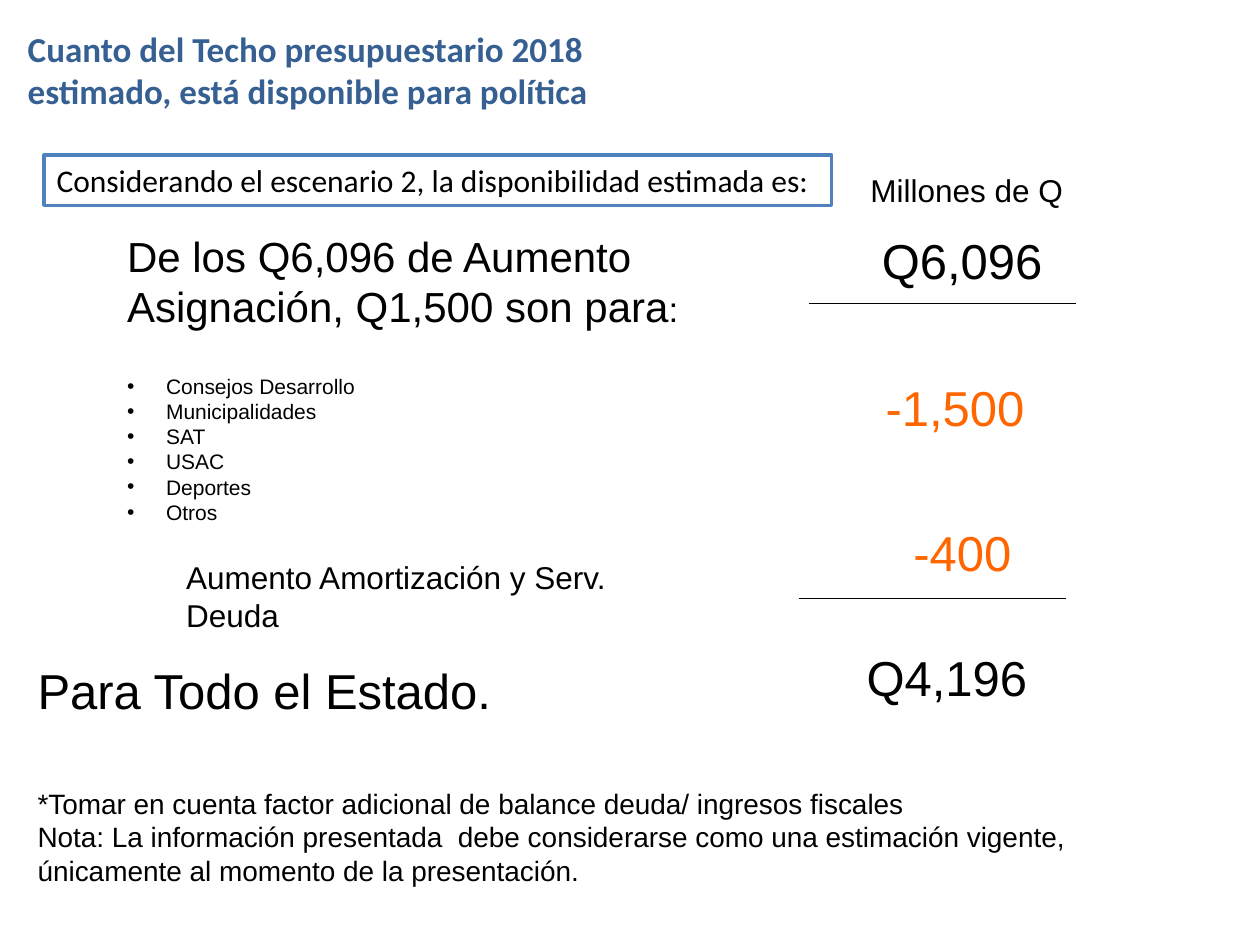
"""Build the slide on the share of the 2018 budget ceiling available for policy."""
from dataclasses import dataclass

from lxml import etree
from pptx import Presentation
from pptx.dml.color import RGBColor
from pptx.enum.shapes import MSO_CONNECTOR, MSO_SHAPE
from pptx.enum.text import MSO_ANCHOR, MSO_AUTO_SIZE, PP_ALIGN
from pptx.oxml.ns import qn
from pptx.util import Inches, Pt

STRAIGHT = MSO_CONNECTOR.STRAIGHT
RECTANGLE = MSO_SHAPE.RECTANGLE
MIDDLE, TOP = MSO_ANCHOR.MIDDLE, MSO_ANCHOR.TOP
GROW, FIXED = MSO_AUTO_SIZE.SHAPE_TO_FIT_TEXT, MSO_AUTO_SIZE.NONE
LEFT = PP_ALIGN.LEFT

COLORS = {"title": "376092", "text": "000000", "deduction": "FF6600",
          "frame": "4F81BD", "paper": "FFFFFF"}
SLIDE_WIDTH, SLIDE_HEIGHT = Inches(10), Inches(7.5)
COLUMN, ROW = SLIDE_WIDTH / 100, SLIDE_HEIGHT / 75
LINE_HEIGHT = 1.2
BULLET_INDENT = Inches(0.31)
RULE_WIDTH = 21.2


@dataclass(frozen=True)
class Area:
    """A rectangle in grid columns and rows."""
    column: float
    row: float
    columns: float
    rows: float

    def lengths(self) -> tuple[int, int, int, int]:
        """Return left, top, width and height."""
        return (int(self.column * COLUMN), int(self.row * ROW),
                int(self.columns * COLUMN), int(self.rows * ROW))


@dataclass(frozen=True)
class Label:
    """A one-line text that does not wrap."""
    text: str
    area: Area
    size: int = 28
    color: str = "text"


LABELS = [
    Label("Millones de Q", Area(68.1, 13.1, 17.4, 4), 18),
    Label("Q6,096", Area(69, 17.8, 14.9, 5.7)),
    Label("-1,500", Area(69.3, 29.5, 13.2, 5.7), color="deduction"),
    Label("-400", Area(71.5, 41, 9.9, 5.7), color="deduction"),
    Label("Q4,196", Area(67.8, 50.9, 14.9, 5.7)),
]
RULES = [(64.2, 24.1), (63.4, 47.5)]
RECIPIENTS = ["Consejos Desarrollo", "Municipalidades", "SAT", "USAC", "Deportes", "Otros"]
NOTES = [
    "*Tomar en cuenta factor adicional de balance deuda/ ingresos fiscales",
    "Nota: La información presentada  debe considerarse como una estimación vigente, "
    "únicamente al momento de la presentación.",
]


def rgb(name: str) -> RGBColor:
    """Look up a colour by its role."""
    return RGBColor.from_string(COLORS[name])


def add_run(paragraph, text: str, size: int, font: str, color: str, bold: bool) -> None:
    """Append a formatted run."""
    run = paragraph.add_run()
    run.text = text
    run.font.size, run.font.name, run.font.bold = Pt(size), font, bold
    run.font.color.rgb = rgb(color)


def write(frame, text: str, *, size: int, font: str = "Arial", color: str = "text",
          bold: bool = False, before: float = 0, bullet: bool = False,
          tail: tuple[str, int] | None = None) -> None:
    """Write one paragraph, reusing the first one while it is empty."""
    paragraph = frame.paragraphs[0]
    if paragraph.runs:
        paragraph = frame.add_paragraph()
    paragraph.alignment = LEFT
    paragraph.line_spacing = Pt(size * LINE_HEIGHT)
    paragraph.space_before = Pt(before)
    if bullet:
        properties = paragraph._p.get_or_add_pPr()
        properties.set("marL", str(BULLET_INDENT))
        properties.set("indent", str(-BULLET_INDENT))
        etree.SubElement(properties, qn("a:buFont")).set("typeface", "Arial")
        etree.SubElement(properties, qn("a:buChar")).set("char", "•")
    add_run(paragraph, text, size, font, color, bold)
    if tail:
        add_run(paragraph, tail[0], tail[1], font, color, bold)


def prepare(frame, *, wrap: bool):
    """Set wrapping, anchoring and growth of a text frame."""
    frame.word_wrap, frame.vertical_anchor, frame.auto_size = wrap, TOP, GROW
    return frame


def add_text_frame(slide, area: Area, *, wrap: bool = True):
    """Add a text box and return its frame."""
    return prepare(slide.shapes.add_textbox(*area.lengths()).text_frame, wrap=wrap)


def add_title(slide, area: Area) -> None:
    """Place and write the title."""
    title = slide.shapes.title
    title.left, title.top, title.width, title.height = area.lengths()
    frame = title.text_frame
    frame.word_wrap, frame.vertical_anchor, frame.auto_size = True, MIDDLE, FIXED
    frame.margin_bottom = Inches(0.38)
    write(frame, "Cuanto del Techo presupuestario 2018 estimado, está disponible para política",
          size=20, font="Calibri", color="title", bold=True)


def add_rule(slide, column: float, row: float) -> None:
    """Draw a horizontal sum line."""
    left, top, width, _ = Area(column, row, RULE_WIDTH, 0).lengths()
    rule = slide.shapes.add_connector(STRAIGHT, left, top, left + width, top)
    rule.line.color.rgb, rule.line.width = rgb("text"), Pt(0.75)
    etree.SubElement(rule._element.spPr, qn("a:effectLst"))


def add_scenario(slide, area: Area) -> None:
    """Draw the framed statement of the scenario."""
    shape = slide.shapes.add_shape(RECTANGLE, *area.lengths())
    shape.shadow.inherit = False
    shape.fill.solid()
    shape.fill.fore_color.rgb = rgb("paper")
    shape.line.color.rgb, shape.line.width = rgb("frame"), Pt(2)
    write(prepare(shape.text_frame, wrap=False),
          "Considerando el escenario 2, la disponibilidad estimada es:", size=18, font="Calibri")


def main() -> None:
    """Build and save the presentation."""
    presentation = Presentation()
    presentation.slide_width, presentation.slide_height = SLIDE_WIDTH, SLIDE_HEIGHT
    slide = presentation.slides.add_slide(presentation.slide_layouts.get_by_name("Title Only"))
    add_title(slide, Area(1.2, 0.6, 55.1, 13.2))

    increase = add_text_frame(slide, Area(9.1, 17.8, 47.2, 24.6))
    write(increase, "De los Q6,096 de Aumento Asignación, Q1,500 son para", size=24, tail=(":", 20))
    for index, recipient in enumerate(RECIPIENTS):
        write(increase, recipient, size=12, bullet=True, before=0 if index else 24)

    write(add_text_frame(slide, Area(13.8, 43.8, 41.7, 7.1)),
          "Aumento Amortización y Serv. Deuda", size=18)

    total = add_text_frame(slide, Area(2, 51.9, 85, 19.2))
    write(total, "Para Todo el Estado.", size=28)
    for index, note in enumerate(NOTES):
        write(total, note, size=16, before=0 if index else 38.4)

    for label in LABELS:
        write(add_text_frame(slide, label.area, wrap=False), label.text,
              size=label.size, color=label.color)
    for column, row in RULES:
        add_rule(slide, column, row)
    add_scenario(slide, Area(3.5, 12.3, 62.5, 4))
    presentation.save("out.pptx")


if __name__ == "__main__":
    main()
